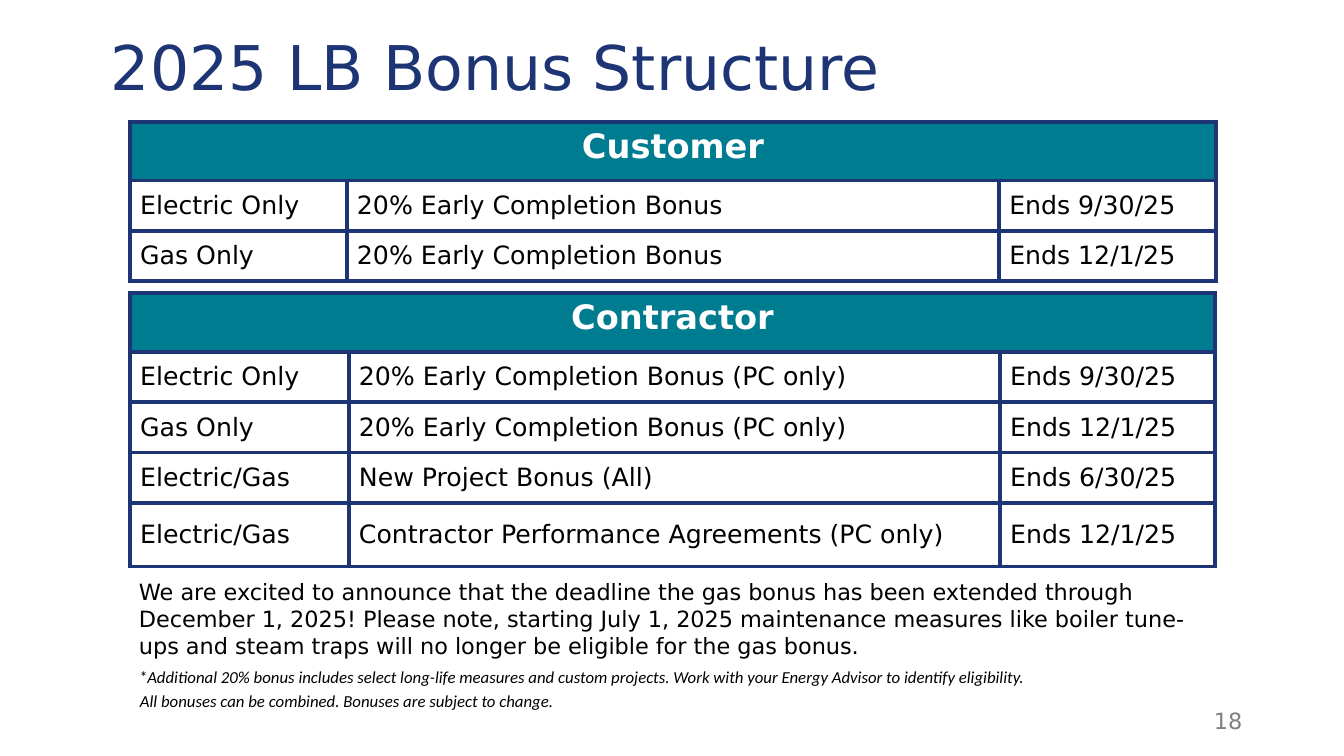
from lxml.etree import SubElement
from pptx import Presentation
from pptx.dml.color import RGBColor
from pptx.enum.text import MSO_ANCHOR, PP_ALIGN
from pptx.oxml.ns import qn
from pptx.util import Inches, Pt

NAVY = RGBColor(0x1E, 0x35, 0x75)
TEAL = RGBColor(0x00, 0x7C, 0x91)
WHITE = RGBColor(0xFF, 0xFF, 0xFF)
BLACK = RGBColor(0x00, 0x00, 0x00)
GRAY = RGBColor(0x80, 0x80, 0x80)
MAIN_FONT = "DejaVu Sans"
NOTE_FONT = "Calibri"

TITLE = "2025 LB Bonus Structure"
PAGE_NUMBER = "18"
TABLES = [
    {
        "heading": "Customer",
        "top": 1.21,
        "columns": [2.15, 6.47, 2.15],
        "heights": [0.58, 0.5, 0.5],
        "rows": [
            ("Electric Only", "20% Early Completion Bonus", "Ends 9/30/25"),
            ("Gas Only", "20% Early Completion Bonus", "Ends 12/1/25"),
        ],
    },
    {
        "heading": "Contractor",
        "top": 2.91,
        "columns": [2.17, 6.46, 2.13],
        "heights": [0.58, 0.5, 0.5, 0.5, 0.63],
        "rows": [
            ("Electric Only", "20% Early Completion Bonus (PC only)", "Ends 9/30/25"),
            ("Gas Only", "20% Early Completion Bonus (PC only)", "Ends 12/1/25"),
            ("Electric/Gas", "New Project Bonus (All)", "Ends 6/30/25"),
            ("Electric/Gas", "Contractor Performance Agreements (PC only)", "Ends 12/1/25"),
        ],
    },
]
ANNOUNCEMENT = (
    "We are excited to announce that the deadline the gas bonus has been extended "
    "through December 1, 2025! Please note, starting July 1, 2025 maintenance measures "
    "like boiler tune-ups and steam traps will no longer be eligible for the gas bonus."
)
ELIGIBILITY = (
    "*Additional 20% bonus includes select long-life measures and custom projects. "
    "Work with your Energy Advisor to identify eligibility."
)
CHANGES = "All bonuses can be combined. Bonuses are subject to change."
TABLE_LEFT = 1.29


def style(para, size, color, name=MAIN_FONT, bold=False, italic=False):
    font = para.font
    font.name, font.size, font.bold, font.italic = name, Pt(size), bold, italic
    font.color.rgb = color


def add_text(page, text, left, top, width, height, size, color, name=MAIN_FONT, italic=False):
    box = page.shapes.add_textbox(*map(Inches, (left, top, width, height)))
    box.text_frame.word_wrap = True
    para = box.text_frame.paragraphs[0]
    para.text = text
    style(para, size, color, name, italic=italic)
    return box


def add_borders(cell):
    properties = cell._tc.get_or_add_tcPr()
    for side in ("a:lnL", "a:lnR", "a:lnT", "a:lnB"):
        line = SubElement(properties, qn(side), w=str(Pt(3)))
        fill = SubElement(line, qn("a:solidFill"))
        SubElement(fill, qn("a:srgbClr"), val=str(NAVY))


def add_bonus_table(page, heading, top, columns, heights, rows):
    frame = page.shapes.add_table(
        len(heights), len(columns), Inches(TABLE_LEFT), Inches(top),
        Inches(sum(columns)), Inches(sum(heights)),
    )
    table = frame.table
    for column, width in zip(table.columns, columns):
        column.width = Inches(width)
    for row, height in zip(table.rows, heights):
        row.height = Inches(height)
    for cell in table.iter_cells():
        add_borders(cell)
        cell.fill.background()

    header = table.cell(0, 0)
    header.merge(table.cell(0, len(columns) - 1))
    header.fill.solid()
    header.fill.fore_color.rgb = TEAL
    para = header.text_frame.paragraphs[0]
    para.text = heading
    para.alignment = PP_ALIGN.CENTER
    style(para, 24, WHITE, bold=True)

    for row_index, values in enumerate(rows, start=1):
        for column_index, value in enumerate(values):
            cell = table.cell(row_index, column_index)
            cell.vertical_anchor = MSO_ANCHOR.MIDDLE
            para = cell.text_frame.paragraphs[0]
            para.text = value
            style(para, 18, BLACK)


def main():
    deck = Presentation()
    deck.slide_width, deck.slide_height = Inches(13.33), Inches(7.5)
    page = deck.slides.add_slide(deck.slide_layouts[5])

    title = page.shapes.title
    title.left, title.top = Inches(0), Inches(0)
    title.width, title.height = Inches(13.33), Inches(1.39)
    title.text_frame.margin_left = Inches(1.1)
    title.text_frame.vertical_anchor = MSO_ANCHOR.MIDDLE
    para = title.text_frame.paragraphs[0]
    para.text = TITLE
    para.alignment = PP_ALIGN.LEFT
    para.line_spacing = 0.9
    style(para, 44, NAVY)

    for content in TABLES:
        add_bonus_table(page, **content)

    add_text(page, ANNOUNCEMENT, 1.28, 5.69, 10.76, 1.18, 16, BLACK)
    add_text(page, ELIGIBILITY, 1.28, 6.57, 10.76, 0.3, 12, BLACK, NOTE_FONT, True)
    add_text(page, CHANGES, 1.29, 6.8, 10.46, 0.3, 12, BLACK, NOTE_FONT, True)

    number = add_text(page, PAGE_NUMBER, 9.42, 6.95, 3, 0.4, 16, GRAY)
    number.text_frame.vertical_anchor = MSO_ANCHOR.MIDDLE
    number.text_frame.paragraphs[0].alignment = PP_ALIGN.RIGHT

    deck.save("out.pptx")


if __name__ == "__main__":
    main()
